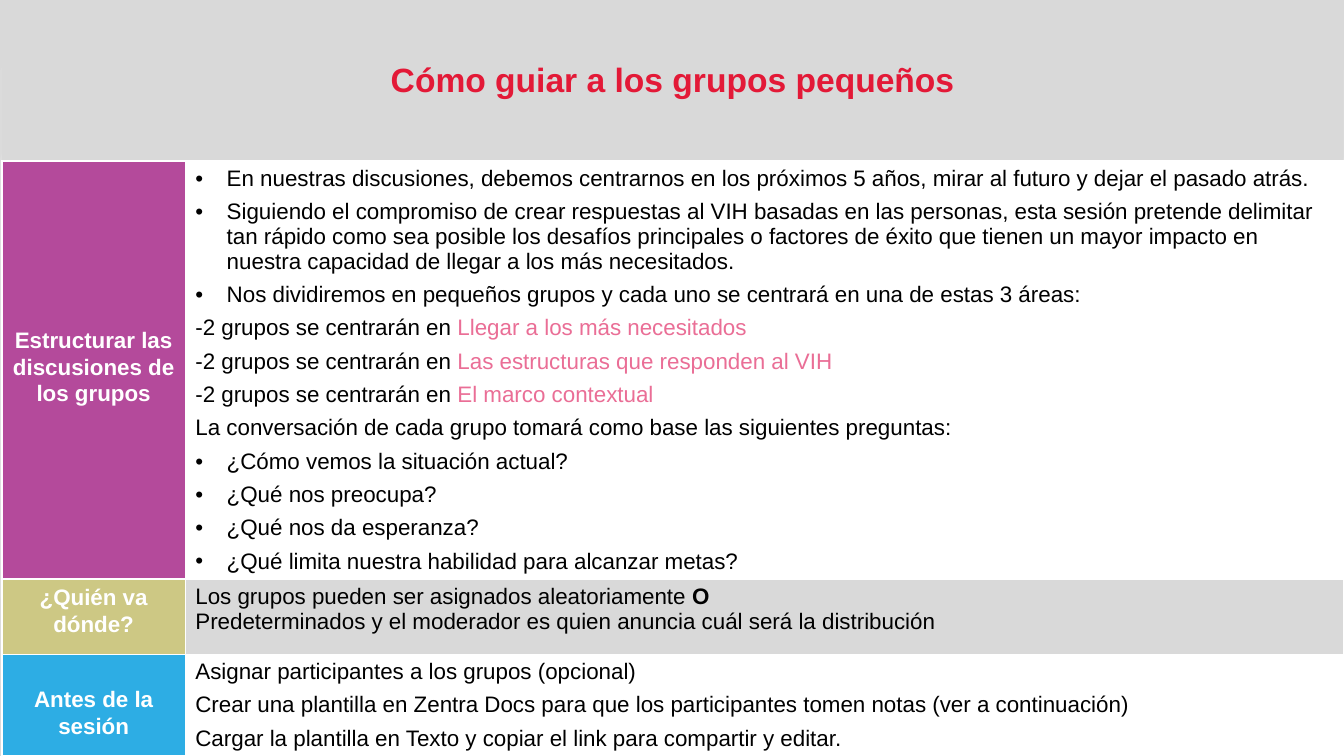
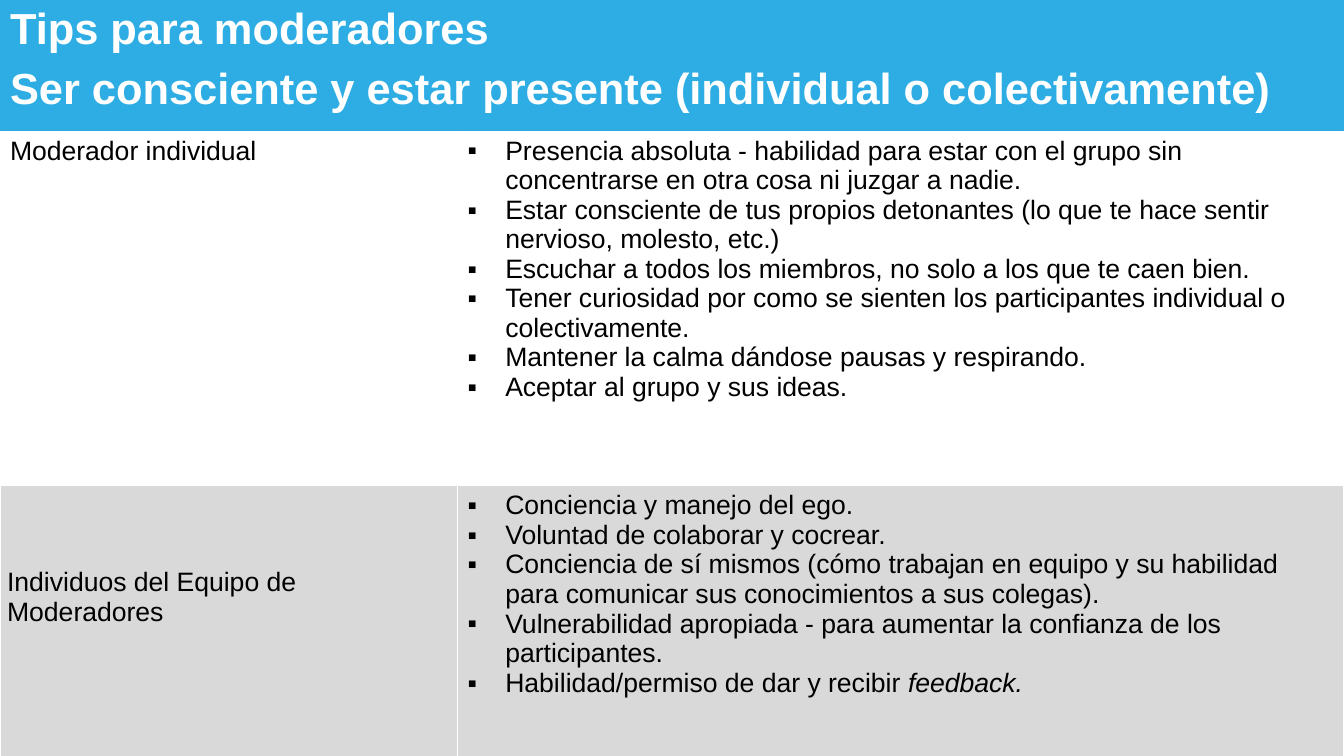
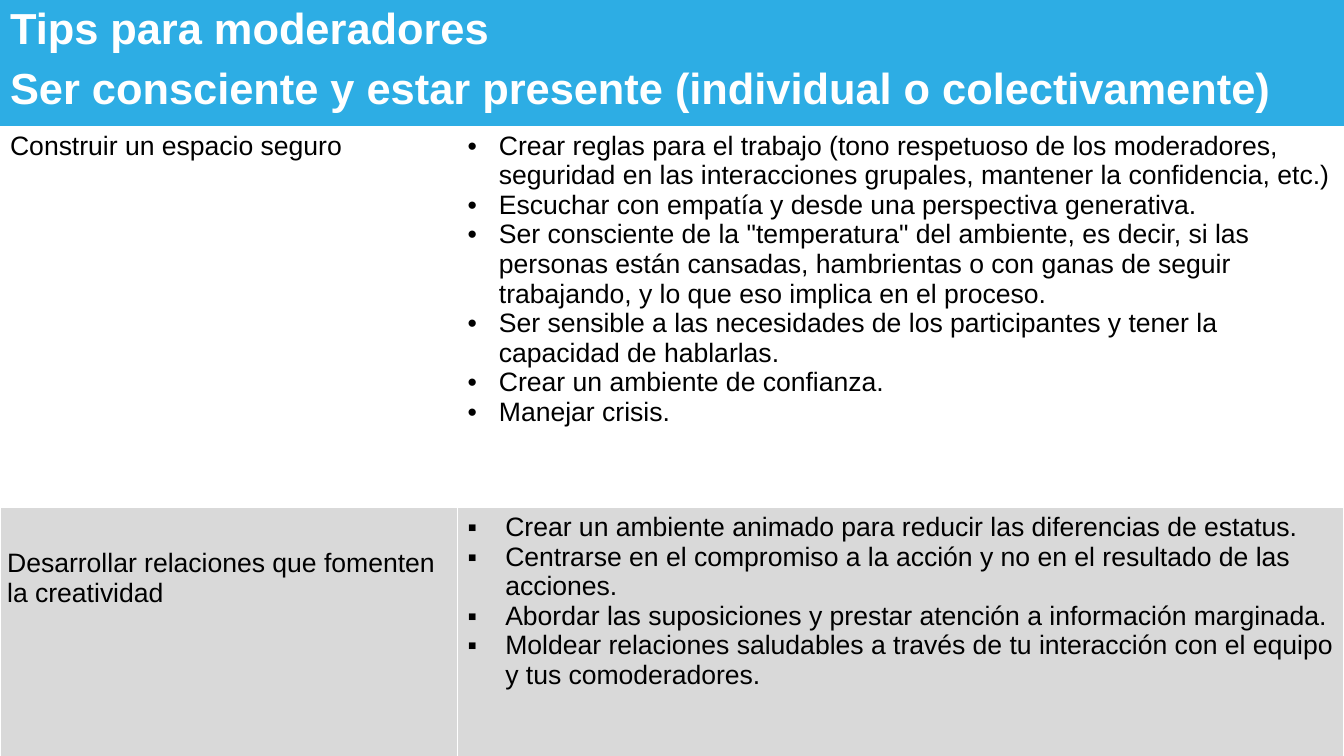
from dataclasses import dataclass, field
from typing import Any

from pptx import Presentation
from pptx.dml.color import RGBColor
from pptx.enum.text import MSO_ANCHOR, PP_ALIGN
from pptx.oxml import parse_xml
from pptx.oxml.ns import qn
from pptx.util import Cm, Pt

NAMESPACE = 'xmlns:a="http://schemas.openxmlformats.org/drawingml/2006/main"'
NO_STYLE = "{2D5ABB26-0587-4C30-8999-92F81FD0307C}"
WHITE = RGBColor(0xFF, 0xFF, 0xFF)
BLACK = RGBColor(0x00, 0x00, 0x00)
GREY = RGBColor(0xD9, 0xD9, 0xD9)
PALE_GREY = RGBColor(0xF2, 0xF2, 0xF2)
RED = RGBColor(0xE3, 0x19, 0x37)
PINK = RGBColor(0xEA, 0x6E, 0x96)
PURPLE = RGBColor(0xB4, 0x4A, 0x9B)
OLIVE = RGBColor(0xCD, 0xC8, 0x84)
BLUE = RGBColor(0x2D, 0xAD, 0xE4)

SPACED = {"space_after": Pt(6)}
LABEL_LINES = {"alignment": PP_ALIGN.CENTER, "line_spacing": 1.07}
LABEL_FONT = {"size": Pt(16), "bold": True}
BODY_FONT = {"size": Pt(16)}
TIP_FONT = {"size": Pt(19)}
TIP_LINES = {"space_after": Pt(8)}
TIP_INSETS = {"margin_left": Cm(0.18), "margin_right": Cm(0.18), "margin_bottom": Cm(0)}


@dataclass(frozen=True)
class Span:
    text: str
    font: dict[str, Any] = field(default_factory=dict)
    color: RGBColor | None = None


@dataclass(frozen=True)
class Para:
    spans: list[Span]
    layout: dict[str, Any] = field(default_factory=dict)
    bullet: str = ""


@dataclass(frozen=True)
class CellContent:
    paras: list[Para]
    fill: RGBColor
    font: dict[str, Any]
    color: RGBColor = BLACK
    layout: dict[str, Any] = field(default_factory=dict)
    sides: str = "LRTB"


@dataclass(frozen=True)
class TablePage:
    left: float
    columns: list[float]
    heights: list[float]
    header: CellContent
    rows: list[tuple[CellContent, CellContent]]


BULLET_INDENTS = {"•": Cm(0.79), "▪": Cm(0.95)}


def apply(target: Any, values: dict[str, Any]) -> None:
    for name, value in values.items():
        setattr(target, name, value)


def plain(text: str, layout: dict[str, Any] | None = None) -> Para:
    return Para([Span(text)], layout or {})


def bullets(mark: str, texts: list[str], layout: dict[str, Any] | None = None) -> list[Para]:
    return [Para([Span(text)], layout or {}, mark) for text in texts]


def label(text: str, fill: RGBColor, top: float = 0.13) -> CellContent:
    return CellContent([plain(text, LABEL_LINES)], fill, LABEL_FONT, WHITE,
                       {"margin_top": Cm(top)})


def body(paras: list[Para], fill: RGBColor) -> CellContent:
    return CellContent(paras, fill, BODY_FONT)


def tip(paras: list[Para], fill: RGBColor, layout: dict[str, Any] | None = None) -> CellContent:
    return CellContent(paras, fill, TIP_FONT, BLACK, layout or {}, "LR")


def tips_page(heights: list[float], first: str, first_points: list[Para],
              second: str, second_top: float, second_points: list[Para]) -> TablePage:
    title_lines = {"alignment": PP_ALIGN.JUSTIFY, "space_after": Pt(8)}
    titles = ["Tips para moderadores",
              "Ser consciente y estar presente (individual o colectivamente)"]
    header = CellContent([plain(title, title_lines) for title in titles], BLUE,
                         {"size": Pt(31), "bold": True}, WHITE, {}, "")
    second_layout = TIP_INSETS | {"margin_top": Cm(second_top)}
    return TablePage(0, [11.53, 22.33], heights, header, [
        (tip([plain(first, TIP_LINES)], WHITE), tip(first_points, WHITE)),
        (tip([plain(second, TIP_LINES)], GREY, second_layout), tip(second_points, GREY)),
    ])


def draw_para(paragraph: Any, para: Para, content: CellContent) -> None:
    apply(paragraph, para.layout)
    for span in para.spans:
        run = paragraph.add_run()
        run.text = span.text
        apply(run.font, {"name": "Arial"} | content.font | span.font)
        run.font.color.rgb = span.color or content.color
    if para.bullet:
        properties = paragraph._p.get_or_add_pPr()
        indent = BULLET_INDENTS[para.bullet]
        properties.set("marL", str(int(indent)))
        properties.set("indent", str(-int(indent)))
        properties.append(parse_xml(f'<a:buFont {NAMESPACE} typeface="Arial"/>'))
        properties.append(parse_xml(f'<a:buChar {NAMESPACE} char="{para.bullet}"/>'))


def draw_cell(cell: Any, content: CellContent) -> None:
    apply(cell, {"vertical_anchor": MSO_ANCHOR.TOP} | content.layout)
    cell.fill.solid()
    cell.fill.fore_color.rgb = content.fill
    properties = cell._tc.get_or_add_tcPr()
    for position, side in enumerate(content.sides):
        properties.insert(position, parse_xml(
            f'<a:ln{side} {NAMESPACE} w="{int(Pt(1))}"><a:solidFill>'
            f'<a:srgbClr val="{WHITE}"/></a:solidFill></a:ln{side}>'))
    frame = cell.text_frame
    for number, para in enumerate(content.paras):
        paragraph = frame.add_paragraph() if number else frame.paragraphs[0]
        draw_para(paragraph, para, content)


def draw_page(deck: Any, plan: TablePage) -> None:
    page = deck.slides.add_slide(deck.slide_layouts[6])
    box = page.shapes.add_table(len(plan.heights), len(plan.columns), Cm(plan.left), Cm(0),
                                Cm(sum(plan.columns)), Cm(sum(plan.heights)))
    table = box.table
    apply(table, {"first_row": False, "horz_banding": False})
    table._tbl.tblPr.find(qn("a:tableStyleId")).text = NO_STYLE
    for column, width in zip(table.columns, plan.columns):
        column.width = Cm(width)
    for row, height in zip(table.rows, plan.heights):
        row.height = Cm(height)
    table.cell(0, 0).merge(table.cell(0, 1))
    draw_cell(table.cell(0, 0), plan.header)
    for row_number, contents in enumerate(plan.rows, start=1):
        for column_number, content in enumerate(contents):
            draw_cell(table.cell(row_number, column_number), content)


def set_background(deck: Any) -> None:
    fill = deck.slide_master.background.fill
    fill.gradient()
    gradient = deck.slide_master.element.find(".//" + qn("p:bgPr") + "/" + qn("a:gradFill"))
    stops = "".join(f'<a:gs pos="{place * 1000}"><a:srgbClr val="{color}"/></a:gs>'
                    for place, color in ((0, WHITE), (50, PALE_GREY), (100, GREY)))
    gradient.getparent().replace(gradient, parse_xml(
        f'<a:gradFill {NAMESPACE} rotWithShape="1"><a:gsLst>{stops}</a:gsLst>'
        '<a:path path="circle"><a:fillToRect l="50000" t="50000" r="50000" b="50000"/>'
        '</a:path></a:gradFill>'))


def group_page() -> TablePage:
    areas = ["Llegar a los más necesitados", "Las estructuras que responden al VIH",
             "El marco contextual"]
    structure = bullets("•", [
        "En nuestras discusiones, debemos centrarnos en los próximos 5 años, mirar al futuro "
        "y dejar el pasado atrás.",
        "Siguiendo el compromiso de crear respuestas al VIH basadas en las personas, esta "
        "sesión pretende delimitar tan rápido como sea posible los desafíos principales o "
        "factores de éxito que tienen un mayor impacto en nuestra capacidad de llegar a los "
        "más necesitados.",
        "Nos dividiremos en pequeños grupos y cada uno se centrará en una de estas 3 áreas:",
    ], SPACED)
    structure += [Para([Span("-2 grupos se centrarán en "), Span(area, color=PINK)], SPACED)
                  for area in areas]
    structure.append(plain(
        "La conversación de cada grupo tomará como base las siguientes preguntas:", SPACED))
    structure += bullets("•", [
        "¿Cómo vemos la situación actual?",
        "¿Qué nos preocupa?",
        "¿Qué nos da esperanza?",
        "¿Qué limita nuestra habilidad para alcanzar metas?",
    ], SPACED)
    assignment = [
        Para([Span("Los grupos pueden ser asignados aleatoriamente "),
              Span("O", {"bold": True})]),
        plain("Predeterminados y el moderador es quien anuncia cuál será la distribución"),
    ]
    preparation = [plain(text, SPACED) for text in (
        "Asignar participantes a los grupos (opcional)",
        "Crear una plantilla en Zentra Docs para que los participantes tomen notas "
        "(ver a continuación)",
        "Cargar la plantilla en Texto y copiar el link para compartir y editar.",
    )]
    header = CellContent(
        [plain("Cómo guiar a los grupos pequeños", {"alignment": PP_ALIGN.CENTER})], GREY,
        {"size": Pt(24), "bold": True}, RED, {"vertical_anchor": MSO_ANCHOR.MIDDLE}, "")
    return TablePage(0.05, [4.62, 29.18], [4.06, 10.53, 1.9, 2.54], header, [
        (label("Estructurar las discusiones de los grupos", PURPLE, 4.17),
         body(structure, WHITE)),
        (label("¿Quién va dónde?", OLIVE), body(assignment, GREY)),
        (label("Antes de la sesión", BLUE, 0.8), body(preparation, WHITE)),
    ])


def presence_page() -> TablePage:
    individual = bullets("▪", [
        "Presencia absoluta - habilidad para estar con el grupo sin concentrarse en otra cosa "
        "ni juzgar a nadie.",
        "Estar consciente de tus propios detonantes (lo que te hace sentir nervioso, molesto, "
        "etc.)",
        "Escuchar a todos los miembros, no solo a los que te caen bien.",
        "Tener curiosidad por como se sienten los participantes individual o colectivamente.",
        "Mantener la calma dándose pausas y respirando.",
        "Aceptar al grupo y sus ideas.",
    ])
    team = bullets("▪", [
        "Conciencia y manejo del ego.",
        "Voluntad de colaborar y cocrear.",
        "Conciencia de sí mismos (cómo trabajan en equipo y su habilidad para comunicar sus "
        "conocimientos a sus colegas).",
        "Vulnerabilidad apropiada - para aumentar la confianza de los participantes.",
    ])
    team.append(Para([Span("Habilidad/permiso de dar y recibir "),
                      Span("feedback.", {"italic": True})], {}, "▪"))
    return tips_page([3.3, 8.94, 6.81], "Moderador individual", individual,
                     "Individuos del Equipo de Moderadores", 2.06, team)


def safety_page() -> TablePage:
    safety = bullets("•", [
        "Crear reglas para el trabajo (tono respetuoso de los moderadores, seguridad en las "
        "interacciones grupales, mantener la confidencia, etc.)",
        "Escuchar con empatía y desde una perspectiva generativa.",
        'Ser consciente de la "temperatura" del ambiente, es decir, si las personas están '
        "cansadas, hambrientas o con ganas de seguir trabajando, y lo que eso implica en el "
        "proceso.",
        "Ser sensible a las necesidades de los participantes y tener la capacidad de "
        "hablarlas.",
        "Crear un ambiente de confianza.",
        "Manejar crisis.",
    ])
    creativity = bullets("▪", [
        "Crear un ambiente animado para reducir las diferencias de estatus.",
        "Centrarse en el compromiso a la acción y no en el resultado de las acciones.",
        "Abordar las suposiciones y prestar atención a información marginada.",
        "Moldear relaciones saludables a través de tu interacción con el equipo y tus "
        "comoderadores.",
    ])
    return tips_page([3.18, 9.61, 6.26], "Construir un espacio seguro", safety,
                     "Desarrollar relaciones que fomenten la creatividad", 1.04, creativity)


def main() -> None:
    deck = Presentation()
    apply(deck, {"slide_width": Cm(33.87), "slide_height": Cm(19.05)})
    set_background(deck)
    for plan in (group_page(), presence_page(), safety_page()):
        draw_page(deck, plan)
    deck.save("out.pptx")


if __name__ == "__main__":
    main()
